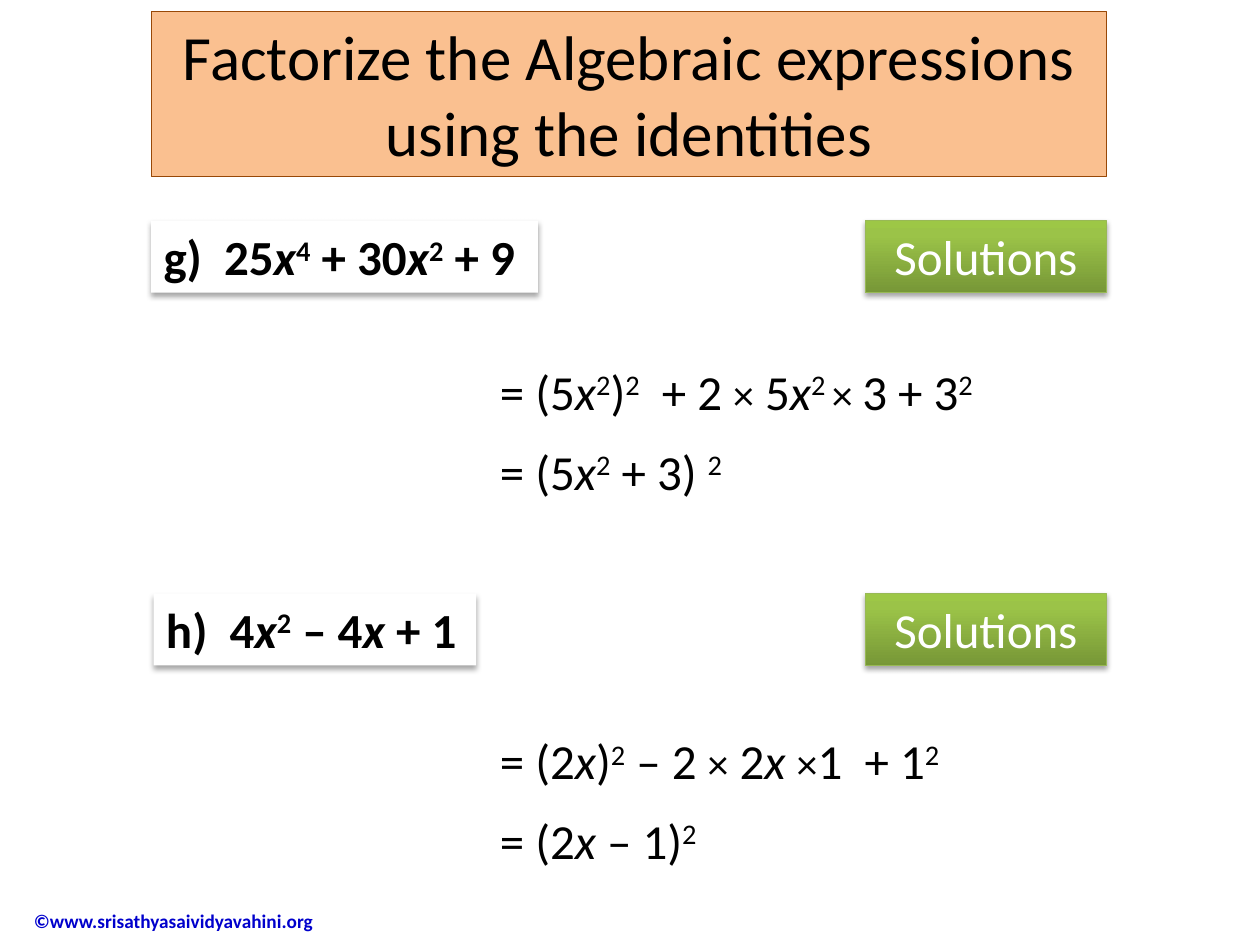
from copy import deepcopy
from dataclasses import dataclass
from typing import NamedTuple

from lxml.etree import SubElement
from pptx import Presentation
from pptx.dml.color import RGBColor
from pptx.enum.shapes import MSO_SHAPE as Preset
from pptx.enum.text import MSO_ANCHOR as Anchor
from pptx.enum.text import MSO_AUTO_SIZE as AutoSize
from pptx.enum.text import PP_ALIGN as Align
from pptx.oxml.ns import qn
from pptx.util import Pt

BLACK = RGBColor(0x00, 0x00, 0x00)
WHITE = RGBColor(0xFF, 0xFF, 0xFF)
BLUE = RGBColor(0x00, 0x00, 0xCC)
PEACH = RGBColor(0xFA, 0xC0, 0x90)
BROWN = RGBColor(0x98, 0x48, 0x07)
GREEN_EDGE = RGBColor(0x98, 0xB9, 0x55)
GREEN_STOPS = (
    (0, RGBColor(0x77, 0x97, 0x37)),
    (0.8, RGBColor(0x9B, 0xC3, 0x48)),
    (1, RGBColor(0x9D, 0xC7, 0x46)),
)

LEFT_EDGE, RIGHT_EDGE = 86.4, 632.2
LABEL_HEIGHT, BUTTON_WIDTH = 41.2, 137.6
STEPS_LEFT, STEPS_HEIGHT = 278.6, 87.1


class Box(NamedTuple):
    left: float
    top: float
    width: float
    height: float


class Term(NamedTuple):
    text: str
    italic: bool = False
    raised: bool = False
    size: float = 28


X = Term("x", italic=True)
SQUARED = Term("2", raised=True)
TIMES = Term("×", size=24)

Line = list[Term]


@dataclass
class Problem:
    question: Line
    question_left: float
    question_width: float
    top: float
    steps: list[Line]
    steps_top: float
    steps_width: float


PROBLEMS = [
    Problem(
        question=[Term("g)  25"), X, Term("4", raised=True), Term(" + 30"), X,
                  SQUARED, Term(" + 9")],
        question_left=LEFT_EDGE, question_width=221, top=126,
        steps=[
            [Term("= (5"), X, SQUARED, Term(")"), SQUARED, Term("  + 2 "), TIMES,
             Term(" 5"), X, Term("2 ", raised=True), Term("× ", size=24),
             Term("3 + 3"), SQUARED],
            [Term("= (5"), X, SQUARED, Term(" + 3) "), SQUARED],
        ],
        steps_top=203, steps_width=301,
    ),
    Problem(
        question=[Term("h)  4"), X, SQUARED, Term(" – 4"), X, Term(" + 1")],
        question_left=87.8, question_width=184.3, top=339.1,
        steps=[
            [Term("= (2"), X, Term(")"), SQUARED, Term(" – 2 "), TIMES, Term(" 2"),
             Term("x ", italic=True), TIMES, Term("1  + 1"), SQUARED],
            [Term("= (2"), X, Term(" – 1)"), SQUARED],
        ],
        steps_top=414, steps_width=278.6,
    ),
]


def write_lines(shape, lines: list[Line], color: RGBColor, bold: bool = False,
                align: Align = Align.LEFT, wrap: bool = True, gap: float = 0) -> None:
    frame = shape.text_frame
    frame_format = {"word_wrap": wrap, "auto_size": AutoSize.SHAPE_TO_FIT_TEXT,
                    "vertical_anchor": Anchor.TOP}
    for name, value in frame_format.items():
        setattr(frame, name, value)
    for index, line in enumerate(lines):
        paragraph = frame.add_paragraph() if index else frame.paragraphs[0]
        paragraph.alignment = align
        paragraph.space_before = Pt(gap if index else 0)
        paragraph.space_after = Pt(gap)
        for term in line:
            run = paragraph.add_run()
            run.text = term.text
            run.font.color.rgb = color
            run_format = {"name": "Calibri", "size": Pt(term.size), "bold": bold,
                          "italic": term.italic}
            for name, value in run_format.items():
                setattr(run.font, name, value)
            if term.raised:
                run.font._element.set("baseline", "30000")


def add_panel(slide, box: Box, fill: RGBColor | None = None,
              edge: RGBColor | None = None):
    panel = slide.shapes.add_shape(Preset.RECTANGLE, *map(Pt, box))
    panel.shadow.inherit = False
    if fill is not None:
        panel.fill.solid()
        panel.fill.fore_color.rgb = fill
    if edge is None:
        panel.line.fill.background()
    else:
        panel.line.color.rgb = edge
        panel.line.width = Pt(0.75)
    return panel


def drop_shadow(shape) -> None:
    effects = shape._element.spPr.find(qn("a:effectLst"))
    shadow = SubElement(effects, qn("a:outerShdw"), blurRad=str(Pt(3.1)),
                        dist=str(Pt(1.8)), dir="5400000", rotWithShape="0")
    color = SubElement(shadow, qn("a:srgbClr"), val=str(BLACK))
    SubElement(color, qn("a:alpha"), val="35000")


def fill_green(shape) -> None:
    """Shade the shape from dark green at the bottom to light at the top."""
    shape.fill.gradient()
    shape.fill.gradient_angle = 90
    stop_list = shape._element.spPr.find(".//" + qn("a:gsLst"))
    stop_list.append(deepcopy(stop_list[0]))
    for stop, (position, color) in zip(shape.fill.gradient_stops, GREEN_STOPS):
        stop.position = position
        stop.color.rgb = color


def add_problem(slide, problem: Problem) -> None:
    question = add_panel(slide, Box(problem.question_left, problem.top,
                                    problem.question_width, LABEL_HEIGHT), WHITE)
    drop_shadow(question)
    write_lines(question, [problem.question], BLACK, bold=True, wrap=False)

    steps_box = Box(STEPS_LEFT, problem.steps_top, problem.steps_width, STEPS_HEIGHT)
    steps = slide.shapes.add_textbox(*map(Pt, steps_box))
    write_lines(steps, problem.steps, BLACK, align=Align.JUSTIFY, wrap=False, gap=6)

    button = add_panel(slide, Box(RIGHT_EDGE - BUTTON_WIDTH, problem.top,
                                  BUTTON_WIDTH, LABEL_HEIGHT), edge=GREEN_EDGE)
    fill_green(button)
    drop_shadow(button)
    write_lines(button, [[Term("Solutions")]], WHITE, align=Align.CENTER)


def add_copyright(slide) -> None:
    notice = slide.shapes.add_textbox(*map(Pt, Box(-23.8, 511.2, 217.4, 29.5)))
    write_lines(notice, [[Term("©www.srisathyasaividyavahini.org", size=11)]],
                BLUE, bold=True)
    notice.text_frame.auto_size = AutoSize.NONE
    notice.text_frame.vertical_anchor = Anchor.MIDDLE
    notice.text_frame.margin_left = Pt(43.2)


def main() -> None:
    deck = Presentation()
    deck.slide_width, deck.slide_height = Pt(720), Pt(540)
    slide = deck.slides.add_slide(deck.slide_layouts[6])
    add_copyright(slide)
    for problem in PROBLEMS:
        add_problem(slide, problem)
    title = add_panel(slide, Box(LEFT_EDGE, 6.5, RIGHT_EDGE - LEFT_EDGE, 94.5),
                      PEACH, BROWN)
    heading = "Factorize the Algebraic expressions using the identities"
    write_lines(title, [[Term(heading, size=36)]], BLACK, align=Align.CENTER)
    deck.save("out.pptx")


if __name__ == "__main__":
    main()
